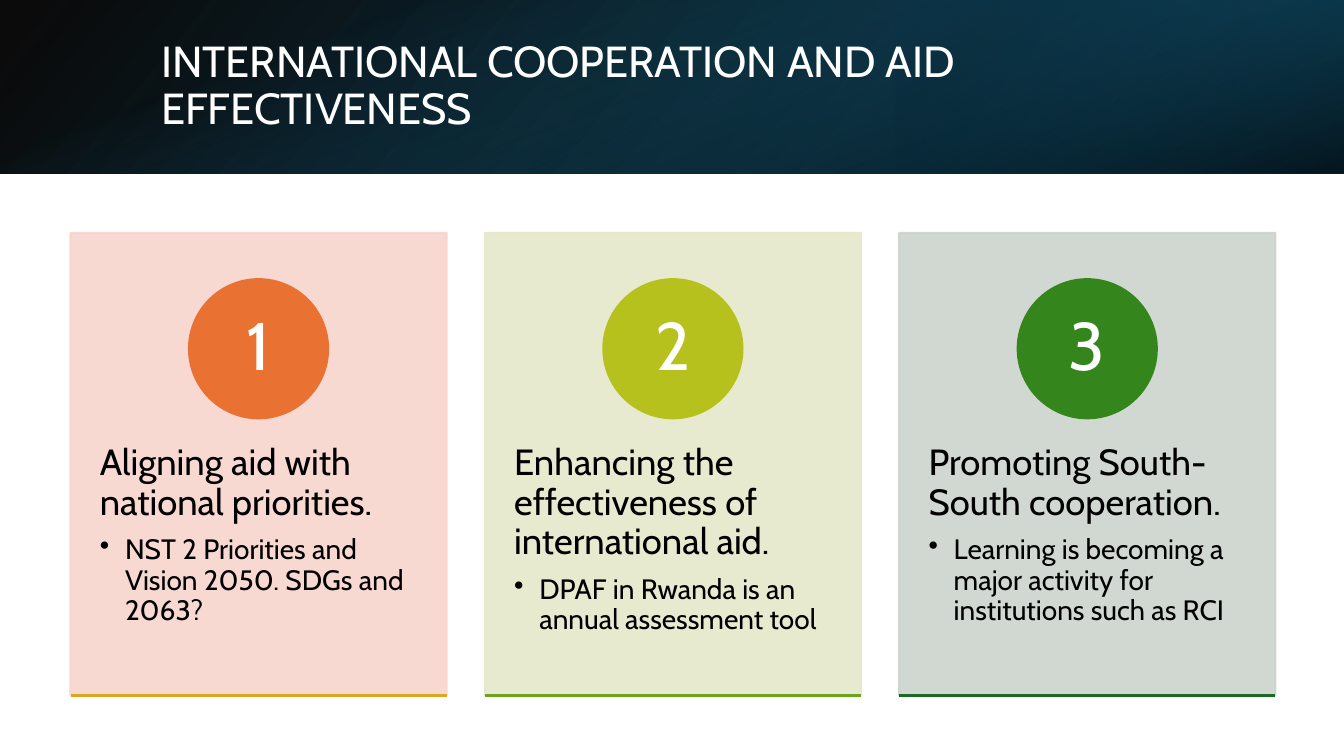
from pptx import Presentation
from pptx.dml.color import RGBColor
from pptx.enum.shapes import MSO_CONNECTOR as Connector, MSO_SHAPE as Shape
from pptx.enum.text import MSO_ANCHOR as Anchor, MSO_AUTO_SIZE as AutoSize, PP_ALIGN as Align
from pptx.oxml.ns import qn
from pptx.util import Inches, Pt
from lxml.etree import SubElement


def colour(code):
    return RGBColor.from_string(code)


def set_opacity(shape, *levels):
    for tint, level in zip(shape.element.spPr.iter(qn("a:srgbClr")), levels):
        SubElement(tint, qn("a:alpha")).set("val", str(level * 1000))


class AidPage:
    font = "Cabin"
    white = "FFFFFF"
    black = "000000"
    line_width = Pt(1.5)
    card_left, card_width, card_pitch = 5.25, 27.98, 30.83
    card_top, card_height = 30.8, 61.2

    def __init__(self, deck):
        self.deck = deck
        self.page = deck.slides.add_slide(deck.slide_layouts[5])
        self.shapes = self.page.shapes

    def across(self, percent):
        return round(self.deck.slide_width * percent / 100)

    def down(self, percent):
        return round(self.deck.slide_height * percent / 100)

    def area(self, left, top, width, height):
        return self.across(left), self.down(top), self.across(width), self.down(height)

    def style(self, para, size, tint, align=Align.LEFT, after=0):
        para.font.name = self.font
        para.font.size = Pt(size)
        para.font.color.rgb = colour(tint)
        para.alignment = align
        para.line_spacing = 0.9
        para.space_before = Pt(0)
        para.space_after = Pt(after)

    def band(self, area, stops, angle, rotation=0, flipped=False):
        shape = self.shapes.add_shape(Shape.RECTANGLE, *self.area(*area))
        shape.shadow.inherit = False
        shape.line.fill.background()
        shape.rotation = rotation
        if flipped:
            shape.element.spPr.xfrm.set("flipH", "1")
        shape.fill.gradient()
        shape.fill.gradient_angle = 360 - angle
        for stop, (position, tint, level) in zip(shape.fill.gradient_stops, stops):
            stop.position = position / 100
            stop.color.rgb = colour(tint)
        set_opacity(shape, *(level for position, tint, level in stops))

    def title(self, text, area):
        box = self.shapes.title
        box.left, box.top, box.width, box.height = self.area(*area)
        self.shapes._spTree.append(box.element)
        frame = box.text_frame
        frame.text = text
        frame.word_wrap = True
        frame.auto_size = AutoSize.NONE
        frame.vertical_anchor = Anchor.MIDDLE
        self.style(frame.paragraphs[0], 31, self.white)

    def solid(self, kind, area, tint):
        shape = self.shapes.add_shape(kind, *self.area(*area))
        shape.shadow.inherit = False
        shape.fill.solid()
        shape.fill.fore_color.rgb = colour(tint)
        shape.line.color.rgb = colour(tint)
        shape.line.width = self.line_width
        return shape

    def badge(self, number, left, tint):
        width, height = 10.35, 18.4
        middle = left + (self.card_width - width) / 2
        circle = self.solid(Shape.OVAL, (middle, 36.93, width, height), tint)
        frame = circle.text_frame
        frame.margin_left = frame.margin_right = Inches(0.11)
        frame.margin_top = frame.margin_bottom = Inches(0.01)
        frame.vertical_anchor = Anchor.MIDDLE
        frame.text = str(number)
        self.style(frame.paragraphs[0], 48, self.white, Align.CENTER)

    def message(self, heading, detail, left):
        box = self.shapes.add_textbox(*self.area(left, 54, self.card_width, 36.67))
        frame = box.text_frame
        frame.word_wrap = True
        frame.margin_left = frame.margin_right = Inches(0.29)
        frame.margin_top = frame.margin_bottom = Inches(0.36)
        frame.text = heading
        self.style(frame.paragraphs[0], 26, self.black, after=9)
        para = frame.add_paragraph()
        para.text = detail
        para.level = 1
        self.style(para, 20, self.black, after=3)
        properties = para._p.get_or_add_pPr()
        properties.set("marL", str(Inches(0.25)))
        properties.set("indent", str(-Inches(0.25)))
        SubElement(properties, qn("a:buChar")).set("char", "•")

    def rule(self, left, tint):
        height = self.down(self.card_top + self.card_height)
        start, end = self.across(left), self.across(left + self.card_width)
        line = self.shapes.add_connector(Connector.STRAIGHT, start, height, end, height)
        line.line.color.rgb = colour(tint)
        line.line.width = self.line_width
        SubElement(line.element.spPr, qn("a:effectLst"))

    def card(self, number, heading, detail, panel, accent, edge):
        left = self.card_left + (number - 1) * self.card_pitch
        area = left, self.card_top, self.card_width, self.card_height
        set_opacity(self.solid(Shape.RECTANGLE, area, panel), 90, 90)
        self.message(heading, detail, left)
        self.badge(number, left, accent)
        self.rule(left, edge)


CARDS = [
    ("Aligning aid with national priorities.",
     "NST 2 Priorities and Vision 2050. SDGs and 2063?",
     "F7D5CE", "E97132", "E0A61D"),
    ("Enhancing the effectiveness of international aid.",
     "DPAF in Rwanda is an annual assessment tool",
     "E5E8CA", "B7C11E", "6BA31D"),
    ("Promoting South-South cooperation.",
     "Learning is becoming a major activity for institutions such as RCI",
     "CCD4CD", "34861C", "196B24"),
]


def main():
    deck = Presentation()
    deck.slide_width, deck.slide_height = Inches(13.33), Inches(7.5)
    page = AidPage(deck)
    page.band((0, 0, 100, 22.93), [(0, "000000", 96), (100, "104862", 100)], 140, flipped=True)
    page.band((66.67, 0, 33.33, 22.93), [(19, "0B3041", 68), (100, "156082", 79)], 320,
              rotation=180, flipped=True)
    page.band((43.55, -77.4, 12.9, 177.73), [(23, "156082", 0), (99, "000000", 74)], 340,
              rotation=90)
    page.title("INTERNATIONAL COOPERATION AND AID EFFECTIVENESS", (11.25, 5.07, 82.35, 12.8))
    for number, card in enumerate(CARDS, 1):
        page.card(number, *card)
    deck.save("out.pptx")


if __name__ == "__main__":
    main()
